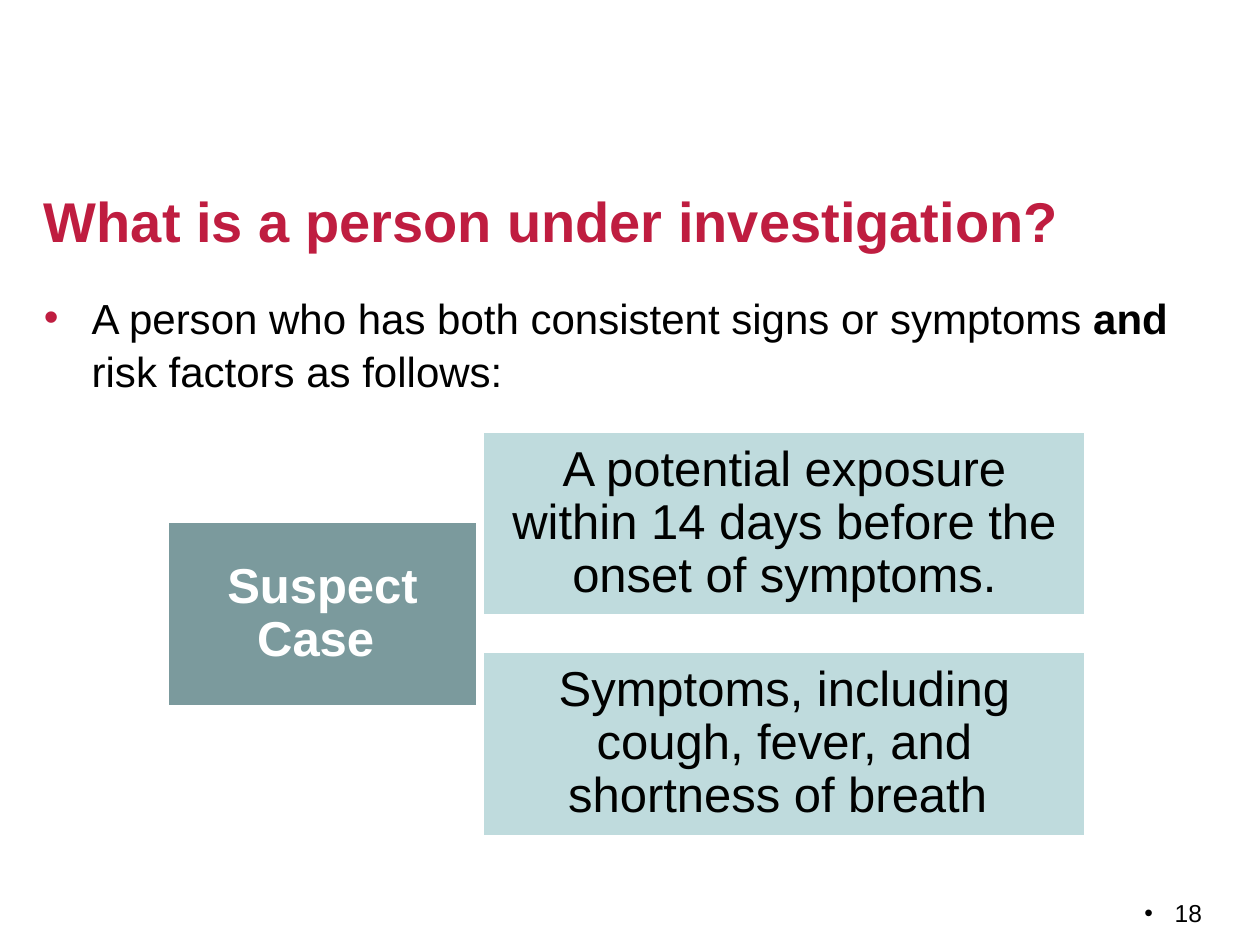
from dataclasses import dataclass

from lxml.etree import SubElement
from pptx import Presentation
from pptx.dml.color import RGBColor
from pptx.enum.shapes import MSO_SHAPE
from pptx.enum.text import MSO_ANCHOR, PP_ALIGN
from pptx.oxml.ns import qn
from pptx.util import Inches, Pt

RED = "BF1D40"
BLACK = "000000"
INK = "000100"
WHITE = "FFFFFF"
TEAL = "7B9A9D"
PALE = "BFDBDD"


@dataclass
class Card:
    """A filled box with centred text."""

    text: str
    left: float
    top: float
    width: float
    fill: str
    ink: str
    bold: bool = False


CARDS = [
    Card("Suspect Case ", 1.33, 4.14, 2.46, TEAL, WHITE, True),
    Card("A potential exposure within 14 days before the onset of symptoms.",
         3.83, 3.42, 4.79, PALE, INK),
    Card("Symptoms, including cough, fever, and shortness of breath ",
         3.83, 5.17, 4.79, PALE, INK),
]


def tint(code: str) -> RGBColor:
    """Turn a hex string into a colour."""
    return RGBColor.from_string(code)


def style(run, size: float, ink: str, bold: bool = False) -> None:
    """Set the font of a run."""
    font = run.font
    font.name = "Arial"
    font.size = Pt(size)
    font.bold = bold
    font.color.rgb = tint(ink)


def bullet(para, indent: float, ink: str) -> None:
    """Give a paragraph a round bullet on a hanging indent."""
    props = para._p.get_or_add_pPr()
    props.set("marL", str(Inches(indent)))
    props.set("indent", str(Inches(-indent)))
    color = SubElement(props, qn("a:buClr"))
    SubElement(color, qn("a:srgbClr")).set("val", ink)
    SubElement(props, qn("a:buFont")).set("typeface", "Arial")
    SubElement(props, qn("a:buChar")).set("char", "•")


def add_text(slide, left: float, top: float, width: float, height: float):
    """Add a wrapping text box and return its frame."""
    box = slide.shapes.add_textbox(
        Inches(left), Inches(top), Inches(width), Inches(height))
    box.text_frame.word_wrap = True
    return box.text_frame


def add_title(slide) -> None:
    """Add the heading."""
    frame = add_text(slide, 0.25, 1.25, 9.5, 1)
    frame.vertical_anchor = MSO_ANCHOR.MIDDLE
    frame.text = "What is a person under investigation?"
    style(frame.paragraphs[0].runs[0], 32, RED, True)


def add_body(slide) -> None:
    """Add the bulleted statement."""
    para = add_text(slide, 0.25, 2.25, 9.5, 1).paragraphs[0]
    bullet(para, 0.38, RED)
    para.line_spacing = 1.05
    parts = [("A person who has both consistent signs or symptoms ", False),
             ("and", True), (" risk factors as follows:", False)]
    for text, bold in parts:
        run = para.add_run()
        run.text = text
        style(run, 24, BLACK, bold)


def add_card(slide, card: Card) -> None:
    """Draw one card."""
    shape = slide.shapes.add_shape(
        MSO_SHAPE.RECTANGLE, Inches(card.left), Inches(card.top),
        Inches(card.width), Inches(1.47))
    shape.shadow.inherit = False
    shape.fill.solid()
    shape.fill.fore_color.rgb = tint(card.fill)
    shape.line.color.rgb = tint(WHITE)
    shape.line.width = Pt(2)
    frame = shape.text_frame
    frame.word_wrap = True
    frame.vertical_anchor = MSO_ANCHOR.MIDDLE
    frame.margin_left = frame.margin_right = Inches(0.12)
    frame.margin_top = frame.margin_bottom = Inches(0.12)
    frame.text = card.text
    para = frame.paragraphs[0]
    para.alignment = PP_ALIGN.CENTER
    para.line_spacing = 0.9
    style(para.runs[0], 28, card.ink, card.bold)


def add_number(slide) -> None:
    """Add the bulleted page number."""
    frame = add_text(slide, 8.42, 7.08, 1.33, 0.25)
    frame.margin_right = Inches(0.21)
    frame.text = "18"
    para = frame.paragraphs[0]
    bullet(para, 0.24, BLACK)
    para.alignment = PP_ALIGN.RIGHT
    style(para.runs[0], 14, BLACK)


def main() -> None:
    """Build and save the slide."""
    deck = Presentation()
    deck.slide_width = Inches(10)
    deck.slide_height = Inches(7.5)
    slide = deck.slides.add_slide(deck.slide_layouts[6])
    add_number(slide)
    add_body(slide)
    for card in CARDS:
        add_card(slide, card)
    add_title(slide)
    deck.save("out.pptx")


if __name__ == "__main__":
    main()
